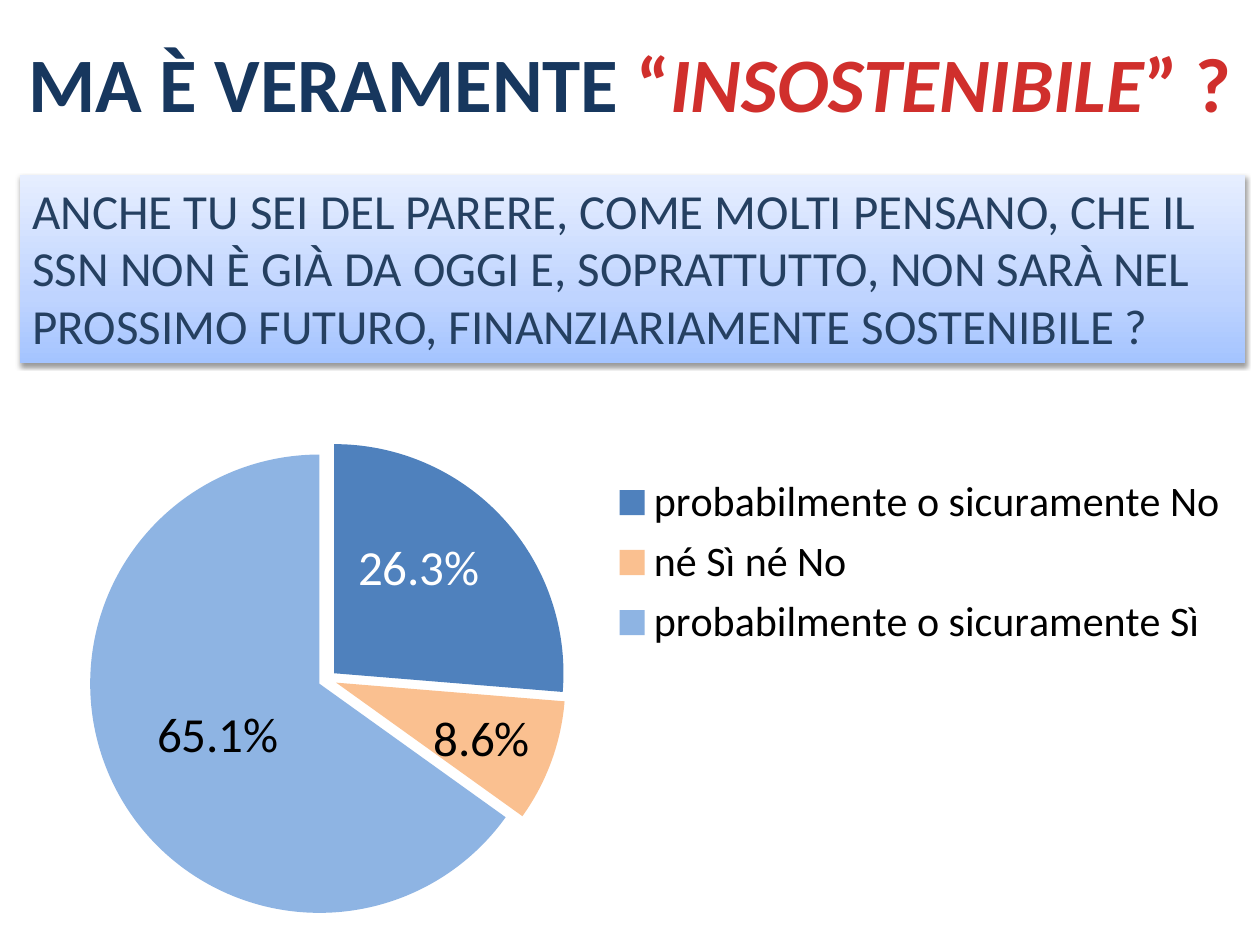
from copy import deepcopy

from pptx import Presentation
from pptx.chart.data import CategoryChartData
from pptx.dml.color import RGBColor
from pptx.enum import chart as kinds, shapes, text
from pptx.oxml import parse_xml
from pptx.oxml.ns import nsdecls, qn
from pptx.util import Pt

FONT = "Calibri"
COLORS = {
    "navy": "17375E", "ink": "254061", "red": "D02F2C",
    "blue": "4F81BD", "peach": "FAC090", "sky": "8EB4E3",
    "low": "A4C4FF", "mid": "BFD4FF", "high": "E6EEFF",
    "white": "FFFFFF", "black": "000000",
}
SLICES = [
    ("probabilmente o sicuramente No", 26.3, "blue"),
    ("né Sì né No", 8.6, "peach"),
    ("probabilmente o sicuramente Sì", 65.1, "sky"),
]


def rgb(name):
    return RGBColor.from_string(COLORS[name])


def style(font, size, color=None):
    font.name, font.size = FONT, Pt(size)
    if color:
        font.color.rgb = rgb(color)


def layout(inner=False, **parts):
    """Manual chart layout; parts are fractions of the chart."""
    tags = '<c:layoutTarget val="inner"/>' if inner else ""
    if "w" in parts:
        tags += '<c:xMode val="edge"/><c:yMode val="edge"/>'
    tags += "".join(f'<c:{key} val="{val}"/>' for key, val in parts.items())
    return parse_xml(f'<c:layout {nsdecls("c")}><c:manualLayout>{tags}'
                     "</c:manualLayout></c:layout>")


def add_title(slide):
    box = slide.shapes.add_textbox(Pt(8.6), Pt(16.6), Pt(702.7), Pt(60.5))
    box.text_frame.word_wrap = True
    para = box.text_frame.paragraphs[0]
    para.alignment = text.PP_ALIGN.CENTER
    style(para.font, 44)
    para.font.bold = True
    for words, color, slant in [("MA È VERAMENTE ", "navy", False), ("“", "red", False),
                                ("INSOSTENIBILE", "red", True), ("” ?", "red", False)]:
        run = para.add_run()
        run.text = words
        run.font.color.rgb = rgb(color)
        run.font.italic = slant


def shade(shape):
    """Fill from light at the top to blue below, with a soft shadow."""
    shape.fill.gradient()
    shape.fill.gradient_angle = 90
    stops = shape.fill.gradient_stops
    first = shape._element.spPr.find(".//" + qn("a:gs"))
    first.addnext(deepcopy(first))
    stops = shape.fill.gradient_stops
    for stop, place, name in zip(stops, (0, 0.35, 1), ("low", "mid", "high")):
        stop.position = place
        stop.color.rgb = rgb(name)
    shape.line.fill.background()
    shape.shadow.inherit = False
    shape._element.spPr.find(qn("a:effectLst")).append(parse_xml(
        f'<a:outerShdw {nsdecls("a")} blurRad="{Pt(3.1)}" dist="{Pt(1.6)}" dir="5400000" '
        f'rotWithShape="0"><a:srgbClr val="{COLORS["black"]}"><a:alpha val="38000"/>'
        "</a:srgbClr></a:outerShdw>"))


def add_query(slide):
    box = slide.shapes.add_shape(shapes.MSO_SHAPE.RECTANGLE,
                                 Pt(11.5), Pt(100), Pt(700), Pt(107.3))
    shade(box)
    frame = box.text_frame
    frame.word_wrap = True
    frame.vertical_anchor = text.MSO_ANCHOR.TOP
    para = frame.paragraphs[0]
    para.text = ("ANCHE TU SEI DEL PARERE, COME MOLTI PENSANO, CHE IL SSN NON È GIÀ DA OGGI E, "
                 "SOPRATTUTTO, NON SARÀ NEL PROSSIMO FUTURO, FINANZIARIAMENTE SOSTENIBILE ?")
    para.alignment = text.PP_ALIGN.LEFT
    para.line_spacing = Pt(33)
    style(para.font, 28, "ink")


def move_label(point, color, x, y):
    """Shift one percent label from its default place."""
    label = point.data_label
    style(label.font, 28, color)
    label.position = kinds.XL_LABEL_POSITION.CENTER
    node = label.font._element.getparent()
    while node.tag != qn("c:dLbl"):
        node = node.getparent()
    node.find(qn("c:showVal")).set("val", "0")
    node.find(qn("c:showPercent")).set("val", "1")
    idx = node.find(qn("c:idx"))
    idx.addnext(parse_xml(f'<c:numFmt {nsdecls("c")} formatCode="0.0%" sourceLinked="0"/>'))
    idx.addnext(layout(x=x, y=y))


def add_pie(slide):
    data = CategoryChartData()
    data.categories = [name for name, _, _ in SLICES]
    data.add_series("Series 1", [val for _, val, _ in SLICES])
    chart = slide.shapes.add_chart(kinds.XL_CHART_TYPE.PIE, Pt(0), Pt(26),
                                   Pt(720), Pt(514), data).chart
    chart.has_title = False
    style(chart.font, 10, "black")
    chart.has_legend = True
    legend = chart.legend
    legend.position = kinds.XL_LEGEND_POSITION.RIGHT
    legend.include_in_layout = False
    style(legend.font, 24, "black")
    legend._element.find(qn("c:legendPos")).addnext(layout(x=0.48, y=0.47, w=0.5, h=0.21))

    plot = chart.plots[0]
    plot.vary_by_categories = True
    area = plot._element.getparent()
    for old in area.findall(qn("c:layout")):
        area.remove(old)
    area.insert(0, layout(True, x=0, y=0.44, w=0.52, h=0.53))

    series = plot.series[0]
    series._element.find(qn("c:tx")).addnext(
        parse_xml(f'<c:explosion {nsdecls("c")} val="4"/>'))
    for i, (_, _, color) in enumerate(SLICES):
        fill = series.points[i].format.fill
        fill.solid()
        fill.fore_color.rgb = rgb(color)
    labels = series.data_labels
    labels.show_value = False
    labels.show_percentage = True
    labels.number_format = "0.0%"
    labels.number_format_is_linked = False
    labels.position = kinds.XL_LABEL_POSITION.CENTER
    style(labels.font, 28, "black")
    move_label(series.points[0], "white", 0, -0.03)
    move_label(series.points[1], "black", 0.03, 0.02)


def main():
    deck = Presentation()
    deck.slide_width, deck.slide_height = Pt(720), Pt(540)
    slide = deck.slides.add_slide(deck.slide_layouts[6])
    add_pie(slide)
    add_query(slide)
    add_title(slide)
    deck.save("out.pptx")


if __name__ == "__main__":
    main()
